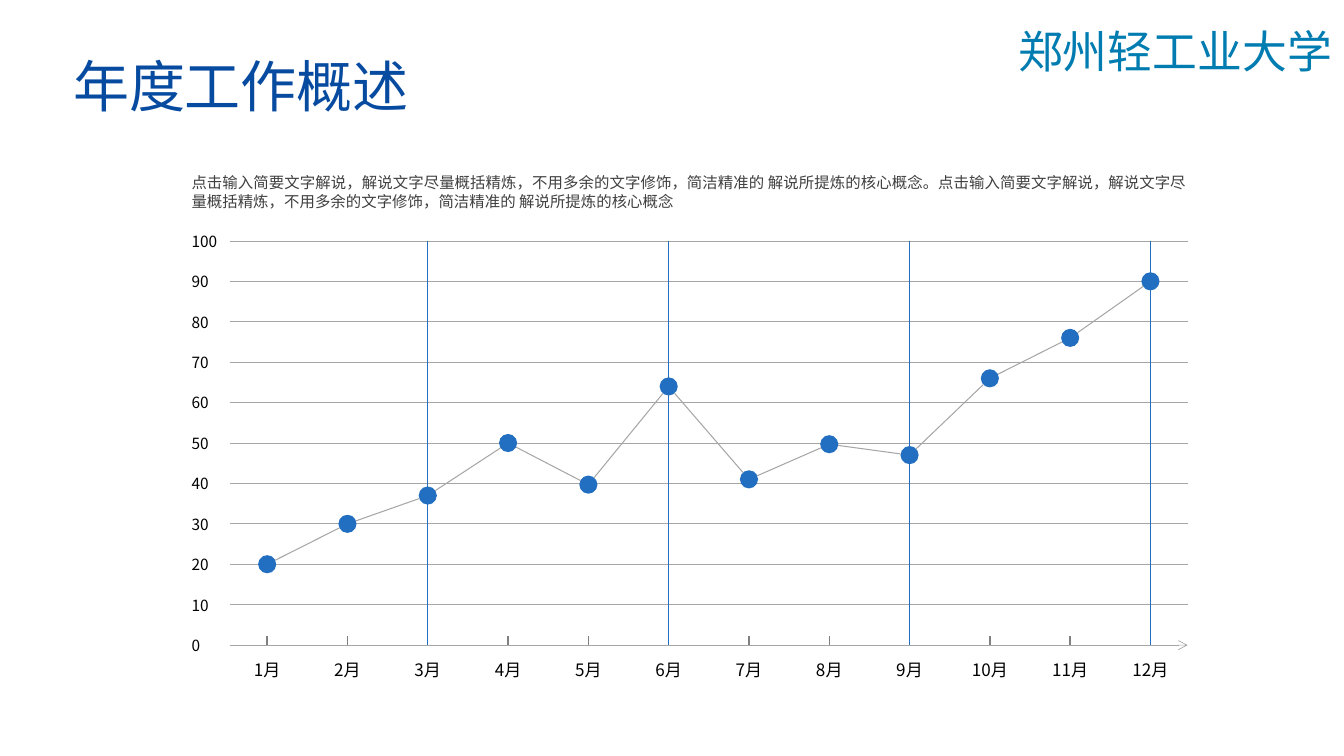
import math
from dataclasses import dataclass

from lxml import etree
from pptx import Presentation
from pptx import util as u
from pptx.dml.color import RGBColor
from pptx.enum import shapes, text
from pptx.oxml import ns


@dataclass(frozen=True)
class Theme:
    font: str = "Noto Sans CJK SC"
    background: str = "FFFFFF"
    school: str = "007CB1"
    title: str = "074BA0"
    body: str = "404040"
    label: str = "000000"
    accent: str = "226FC2"
    grid: str = "A6A6A6"
    tick: str = "808080"
    school_size: float = 32
    title_size: float = 40
    body_size: float = 11
    month_size: float = 12.2


@dataclass(frozen=True)
class Box:
    """A region in inches."""
    left: float
    top: float
    width: float
    height: float

    @property
    def right(self):
        return self.left + self.width

    @property
    def bottom(self):
        return self.top + self.height

    def lengths(self):
        return [u.Inches(side) for side in (self.left, self.top, self.width, self.height)]


THEME = Theme()
LEFT = text.PP_ALIGN.LEFT
CENTER = text.PP_ALIGN.CENTER
JUSTIFY = text.PP_ALIGN.JUSTIFY

SUMMARY = (
    "点击输入简要文字解说，解说文字尽量概括精炼，不用多余的文字修饰，简洁精准的 解说所提炼的核心概念。",
    "点击输入简要文字解说，解说文字尽量概括精炼，不用多余的文字修饰，简洁精准的 解说所提炼的核心概念",
)
MONTHLY_VALUES = [20, 30, 37, 50, 39.7, 64, 41, 49.7, 47, 66, 76, 90]
AXIS_MAX = 100
AXIS_STEP = 10
FIRST_MONTH_OFFSET = 0.37
MONTH_GAP = 0.7964
TICK_HEIGHT = 0.09
MARKER_RADIUS = 0.09


def add_text(page, box, spans, size, color, align, insets=(0.1, 0.05),
             wrap=True, anchor=text.MSO_ANCHOR.TOP):
    frame = page.shapes.add_textbox(*box.lengths()).text_frame
    frame.word_wrap = wrap
    frame.vertical_anchor = anchor
    frame.margin_left = frame.margin_right = u.Inches(insets[0])
    frame.margin_top = frame.margin_bottom = u.Inches(insets[1])
    para = frame.paragraphs[0]
    para.alignment = align
    for content in spans:
        span = para.add_run()
        span.text = content
        span.font.size = u.Pt(size)
        span.font.name = THEME.font
        span.font.color.rgb = RGBColor.from_string(color)
        east_asian = etree.SubElement(span.font._element, ns.qn("a:ea"))
        east_asian.set("typeface", THEME.font)


def add_line(page, start, end, color, width, arrow=False):
    line = page.shapes.add_connector(
        shapes.MSO_CONNECTOR.STRAIGHT, *[u.Inches(value) for value in (*start, *end)])
    line.line.color.rgb = RGBColor.from_string(color)
    line.line.width = u.Pt(width)
    if arrow:
        tail = etree.SubElement(line.line._get_or_add_ln(), ns.qn("a:tailEnd"))
        tail.set("type", "arrow")
    etree.SubElement(line._element.spPr, ns.qn("a:effectLst"))


def add_marker(page, center):
    x, y = center
    side = 2 * MARKER_RADIUS
    box = Box(x - MARKER_RADIUS, y - MARKER_RADIUS, side, side)
    marker = page.shapes.add_shape(shapes.MSO_SHAPE.OVAL, *box.lengths())
    marker.shadow.inherit = False
    marker.fill.solid()
    marker.fill.fore_color.rgb = RGBColor.from_string(THEME.accent)
    marker.line.fill.background()


def add_link(page, start, end):
    """Join two markers from edge to edge."""
    distance = math.dist(start, end)
    step_x, step_y = [(b - a) * MARKER_RADIUS / distance for a, b in zip(start, end)]
    add_line(page, (start[0] + step_x, start[1] + step_y),
             (end[0] - step_x, end[1] - step_y), THEME.grid, 0.75)


def add_header(page, school_box, title_box):
    add_text(page, school_box, ["郑州轻工业大学"], THEME.school_size, THEME.school, LEFT)
    add_text(page, title_box, ["年度工作概述"], THEME.title_size, THEME.title, CENTER,
             insets=(0.12, 0.06), anchor=text.MSO_ANCHOR.MIDDLE)


def add_value_axis(page, plot, height_of):
    for value in range(0, AXIS_MAX + 1, AXIS_STEP):
        y = height_of(value)
        add_line(page, (plot.left, y), (plot.right, y), THEME.grid, 0.5, arrow=value == 0)
        add_text(page, Box(plot.left - 0.38, y - 0.09, 0.28, 0.19), [str(value)],
                 THEME.body_size, THEME.label, JUSTIFY, insets=(0, 0))


def add_month_axis(page, plot, month_positions):
    for month, x in enumerate(month_positions, start=1):
        add_line(page, (x, plot.bottom), (x, plot.bottom - TICK_HEIGHT), THEME.tick, 1)
        if month % 3 == 0:
            add_line(page, (x, plot.bottom), (x, plot.top), THEME.accent, 1)
        width = 0.52 if month < 10 else 0.68
        add_text(page, Box(x - width / 2, plot.bottom + 0.09, width, 0.31), [f"{month}月"],
                 THEME.month_size, THEME.label, CENTER, wrap=False)


def add_trend(page, plot):
    def height_of(value):
        return plot.bottom - plot.height * value / AXIS_MAX

    month_positions = [plot.left + FIRST_MONTH_OFFSET + MONTH_GAP * index
                       for index in range(len(MONTHLY_VALUES))]
    points = [(x, height_of(value)) for x, value in zip(month_positions, MONTHLY_VALUES)]
    add_value_axis(page, plot, height_of)
    add_month_axis(page, plot, month_positions)
    for point in points:
        add_marker(page, point)
    for start, end in zip(points, points[1:]):
        add_link(page, start, end)


def main():
    deck = Presentation()
    deck.slide_width = u.Inches(13.33)
    deck.slide_height = u.Inches(7.5)
    page = deck.slides.add_slide(deck.slide_layouts[6])
    page.background.fill.solid()
    page.background.fill.fore_color.rgb = RGBColor.from_string(THEME.background)

    add_header(page, Box(10, 0.19, 3.33, 0.58), Box(-0.13, 0.64, 5.04, 0.4))
    add_text(page, Box(1.9, 1.72, 9.87, 0.37), SUMMARY, THEME.body_size, THEME.body,
             JUSTIFY, insets=(0, 0))
    add_trend(page, Box(2.28, 2.39, 9.5, 4.01))
    deck.save("out.pptx")


if __name__ == "__main__":
    main()
